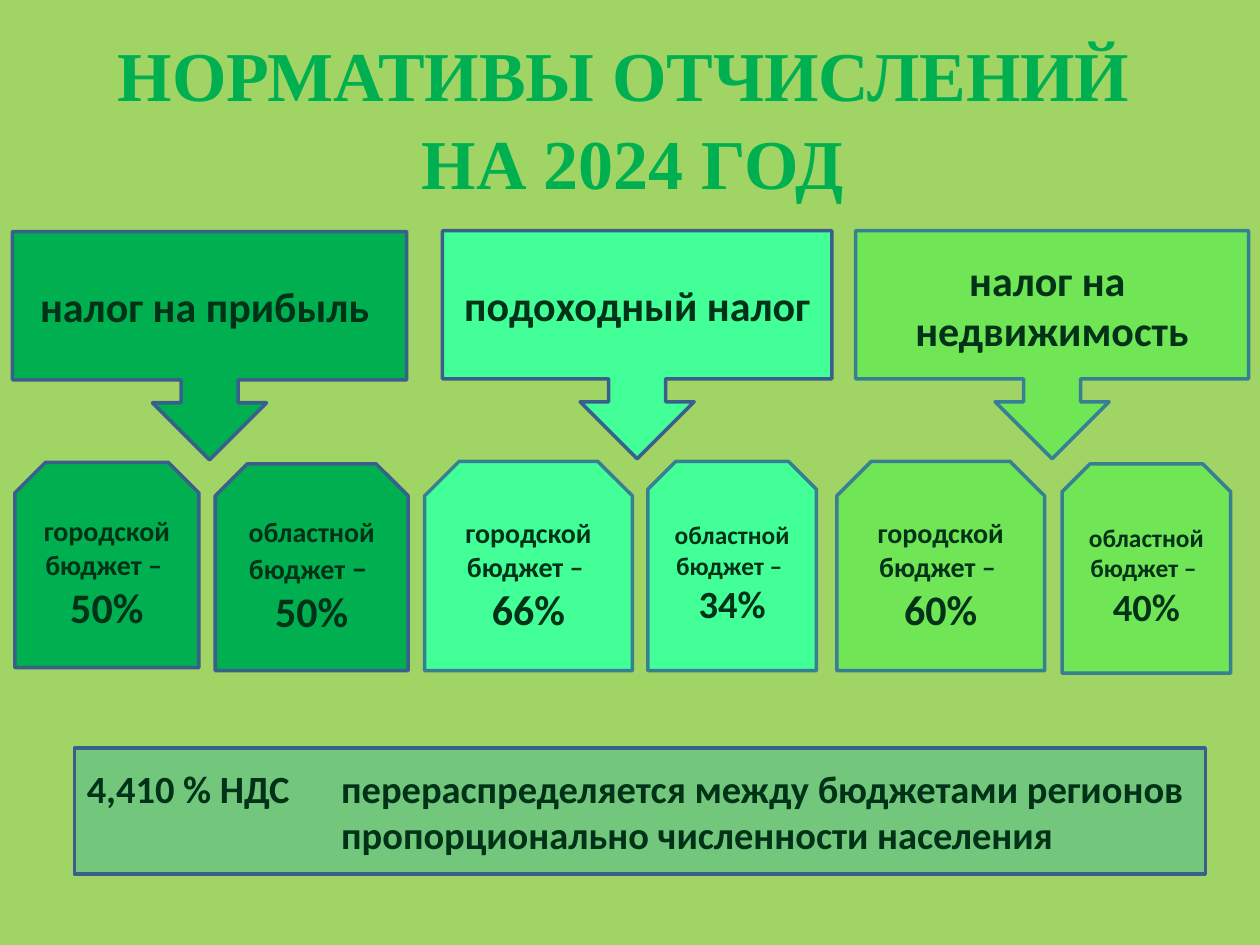
from dataclasses import dataclass

from pptx import Presentation
from pptx.dml.color import RGBColor
from pptx.enum.shapes import MSO_SHAPE
from pptx.enum.text import MSO_ANCHOR, MSO_AUTO_SIZE, PP_ALIGN
from pptx.util import Cm, Pt

ARROW = MSO_SHAPE.DOWN_ARROW_CALLOUT
SNIP = MSO_SHAPE.SNIP_2_SAME_RECTANGLE
RECT = MSO_SHAPE.RECTANGLE
TOP, MIDDLE = MSO_ANCHOR.TOP, MSO_ANCHOR.MIDDLE
LEFT, CENTER = PP_ALIGN.LEFT, PP_ALIGN.CENTER
FIXED = MSO_AUTO_SIZE.NONE


@dataclass(frozen=True)
class Theme:
    """Colours, fonts and type sizes of the slide."""
    back: str = "A0D565"
    ink: str = "003217"
    green: str = "00B050"
    mint: str = "43FF98"
    lime: str = "70E555"
    sage: str = "73C77D"
    blue: str = "3A5F8C"
    teal: str = "377F92"
    sans: str = "Calibri"
    serif: str = "Times New Roman"
    title: float = 40
    head: float = 24
    note: float = 22
    city: tuple = (16, 16, 24)
    wide: tuple = (16, 18, 24)
    slim: tuple = (14.5, 14.5, 22)


THEME = Theme()
TAXES = [
    {"name": ["налог на прибыль "], "place": (0.25, 4.67, 7.95, 4.6),
     "fill": THEME.green, "edges": (THEME.blue, THEME.blue),
     "parts": [("городской", "50%", (0.3, 9.32, 3.71, 4.14), THEME.city),
               ("областной", "50%", (4.34, 9.35, 3.89, 4.17), THEME.wide)]},
    {"name": ["подоходный налог"], "place": (8.92, 4.65, 7.85, 4.6),
     "fill": THEME.mint, "edges": (THEME.blue, THEME.teal),
     "parts": [("городской", "66%", (8.56, 9.3, 4.19, 4.22), THEME.city),
               ("областной", "34%", (13.06, 9.3, 3.4, 4.22), THEME.slim)]},
    {"name": ["налог на ", "недвижимость"], "place": (17.25, 4.65, 7.92, 4.6),
     "fill": THEME.lime, "edges": (THEME.teal, THEME.teal),
     "parts": [("городской", "60%", (16.87, 9.3, 4.19, 4.22), THEME.city),
               ("областной", "40%", (21.41, 9.35, 3.4, 4.22), THEME.slim)]},
]


def style(item, values):
    """Set each attribute named in a dict."""
    for name, value in values.items():
        setattr(item, name, value)


def write(frame, lines, font=THEME.sans, color=THEME.ink, align=CENTER,
          anchor=MIDDLE, **extra):
    """Fill a text frame with lines, each a list of (text, size) runs."""
    style(frame, {"word_wrap": True, "auto_size": FIXED,
                  "vertical_anchor": anchor})
    for i, line in enumerate(lines):
        para = frame.paragraphs[0] if i == 0 else frame.add_paragraph()
        style(para, {"alignment": align, **extra})
        for text, size in line:
            run = para.add_run()
            run.text = text
            style(run.font, {"name": font, "size": Pt(size), "bold": True})
            run.font.color.rgb = RGBColor.from_string(color)


def block(slide, kind, place, fill, edge):
    """Add a filled, outlined shape and return its text frame."""
    shape = slide.shapes.add_shape(kind, *map(Cm, place))
    shape.shadow.inherit = False
    shape.fill.solid()
    shape.fill.fore_color.rgb = RGBColor.from_string(fill)
    shape.line.color.rgb = RGBColor.from_string(edge)
    shape.line.width = Pt(2)
    return shape.text_frame


def head(slide, lines):
    """Place and write the slide title."""
    title = slide.shapes.title
    style(title, {"left": Cm(0.4), "top": Cm(0.42),
                  "width": Cm(24.7), "height": Cm(3.2)})
    write(title.text_frame, [[(line, THEME.title)] for line in lines],
          THEME.serif, THEME.green, anchor=TOP, line_spacing=1.05)


def column(slide, tax):
    """Draw one tax callout and its two budget shares."""
    edge, rim = tax["edges"]
    frame = block(slide, ARROW, tax["place"], tax["fill"], edge)
    write(frame, [[(line, THEME.head)] for line in tax["name"]])
    for owner, share, place, (text, dash, large) in tax["parts"]:
        frame = block(slide, SNIP, place, tax["fill"], rim)
        write(frame, [[(f"{owner} бюджет ", text), ("– ", dash)],
                      [(share, large)]])


def note(slide):
    """Draw the VAT note with a hanging indent."""
    frame = block(slide, RECT, (1.5, 15.08, 22.8, 2.54),
                  THEME.sage, THEME.blue)
    lines = ["4,410 % НДС\tперераспределяется между бюджетами регионов",
             "пропорционально численности населения"]
    write(frame, [[(line, THEME.note)] for line in lines], align=LEFT)
    for para, indent in zip(frame.paragraphs, (-5.13, 0)):
        props = para._p.get_or_add_pPr()
        props.set("marL", str(Cm(5.13)))
        props.set("indent", str(Cm(indent)))


def main():
    """Build and save the slide."""
    deck = Presentation()
    style(deck, {"slide_width": Cm(25.4), "slide_height": Cm(19.05)})
    slide = deck.slides.add_slide(deck.slide_layouts[5])
    slide.background.fill.solid()
    slide.background.fill.fore_color.rgb = RGBColor.from_string(THEME.back)
    head(slide, ["НОРМАТИВЫ ОТЧИСЛЕНИЙ ", "НА 2024 ГОД"])
    for tax in TAXES:
        column(slide, tax)
    note(slide)
    deck.save("out.pptx")


if __name__ == "__main__":
    main()
